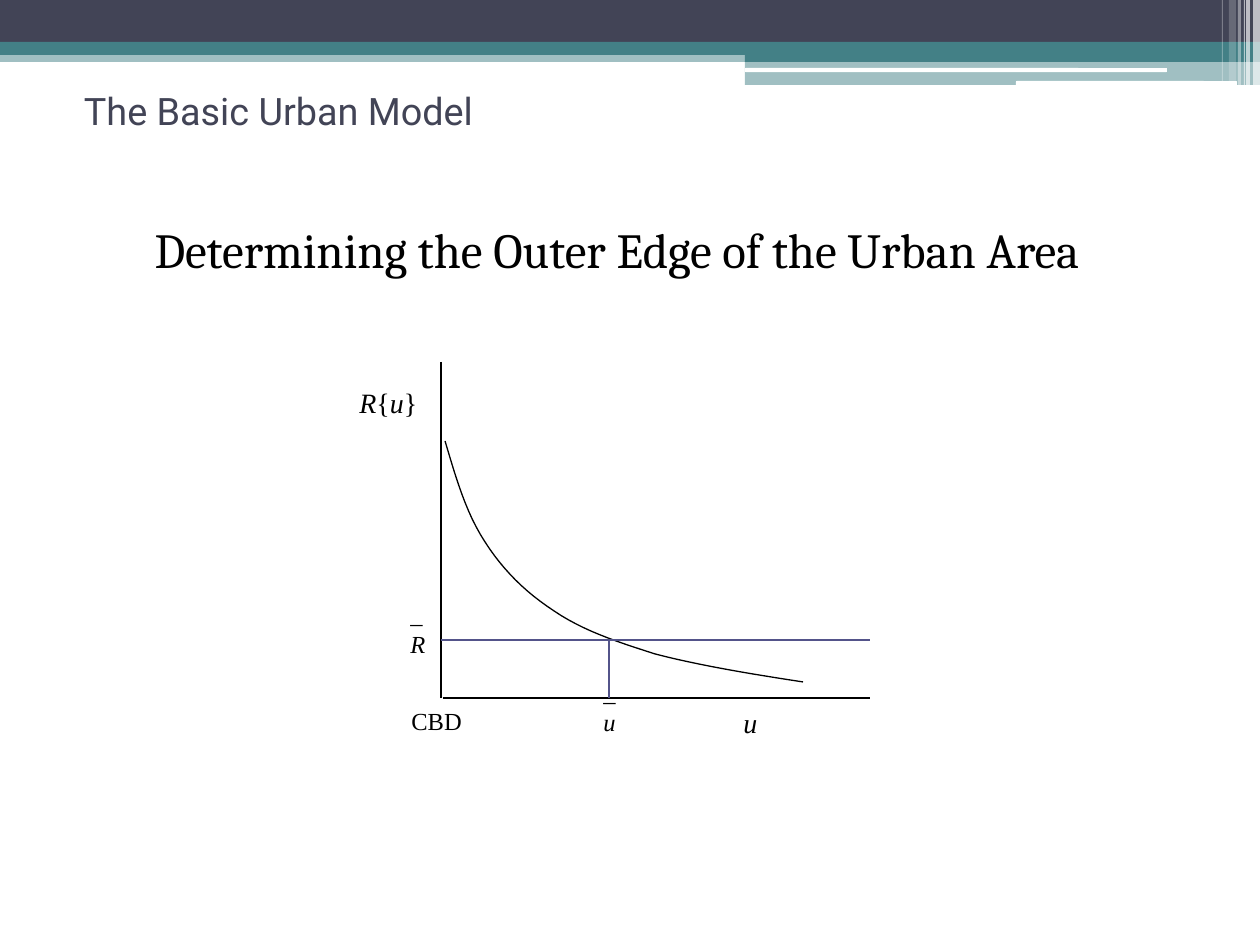
from itertools import pairwise
from lxml.etree import SubElement
from pptx import Presentation
from pptx.dml.color import RGBColor
from pptx.enum.shapes import MSO_CONNECTOR as Line, MSO_SHAPE as Shape
from pptx.enum.text import PP_ALIGN as Align
from pptx.oxml.ns import qn
from pptx.util import Emu, Pt

SLATE, TEAL, WHITE, BLACK, INDIGO = "424456", "438086", "FFFFFF", "000000", "53548A"
SERIF = "Times New Roman"


def px(length):
    return Emu(round(length * 914400 / 126))


def paint(color_format, hex_color, alpha=100):
    color_format.rgb = RGBColor.from_string(hex_color)
    if alpha < 100:
        srgb = color_format._xFill.find(qn("a:srgbClr"))
        SubElement(srgb, qn("a:alpha"), val=str(alpha * 1000))


def add_block(shapes, box, color, alpha=100, kind=Shape.RECTANGLE):
    block = shapes.add_shape(kind, *map(px, box))
    block.shadow.inherit = False
    block.fill.solid()
    paint(block.fill.fore_color, color, alpha)
    block.line.fill.background()


def add_line(shapes, start, end, color):
    line = shapes.add_connector(Line.STRAIGHT, *map(px, start + end))
    line.line.width = Pt(0.75)
    paint(line.line.color, color)
    SubElement(line._element.spPr, qn("a:effectLst"))


def add_frame(shapes, box):
    frame = shapes.add_textbox(*map(px, box)).text_frame
    frame.word_wrap = True
    return frame


def add_run(paragraph, text, size, font, color=BLACK, italic=False):
    run = paragraph.add_run()
    run.text = text
    run.font.size = Pt(size)
    run.font.name = font
    run.font.italic = italic
    paint(run.font.color, color)


def draw_header(shapes, left, top, width):
    tab = 745
    bands = [
        (0, 50, width, 12, TEAL, 50),
        (0, 0, width, 42, SLATE, 100),
        (0, 42, width, 13, TEAL, 100),
        (tab, 49, width - tab, 13, TEAL, 100),
        (tab, 61, width - tab, 24, TEAL, 50),
    ]
    for x, y, w, h, color, alpha in bands:
        add_block(shapes, (left + x, top + y, w, h), color, alpha)
    for x, y, w, h in [(tab, 68, 422, 4), (1016, 81, 221, 5)]:
        add_block(shapes, (left + x, top + y, w, h), WHITE, kind=Shape.ROUNDED_RECTANGLE)
    stripes = [(7, 7, 86, 65), (14, 4, 86, 65), (16, 1, 86, 60),
               (22, 3, 86, 40), (31, 7, 81, 20), (38, 1, 81, 30)]
    for from_right, w, h, alpha in stripes:
        add_block(shapes, (left + width - from_right, top, w, h), WHITE, alpha)


def draw_title(shapes, box):
    frame = add_frame(shapes, box)
    frame.margin_left, frame.margin_top = px(21), 0
    add_run(frame.paragraphs[0], "The Basic Urban Model", 21.6, "Roboto", SLATE)


def draw_heading(shapes, box):
    frame = add_frame(shapes, box)
    frame.margin_left, frame.margin_top = px(28), px(74)
    heading = frame.paragraphs[0]
    heading.alignment = Align.CENTER
    add_run(heading, "Determining the Outer Edge of the Urban Area", 28, "Cambria")


def bezier(points, t):
    while len(points) > 1:
        points = [(x1 + (x2 - x1) * t, y1 + (y2 - y1) * t)
                  for (x1, y1), (x2, y2) in pairwise(points)]
    return points[0]


def draw_rent_curve(shapes, left, top):
    controls = [(4, 79), (15, 116), (25, 151), (44, 180), (62, 208), (84, 230),
                (113, 249), (141, 268), (173, 279), (214, 292), (256, 303),
                (309, 312), (362, 320)]
    steps = 12
    trace = [controls[0]] + [bezier(controls[first:first + 4], step / steps)
                             for first in range(0, len(controls) - 1, 3)
                             for step in range(1, steps + 1)]
    points = [(px(left + x), px(top + y)) for x, y in trace]
    builder = shapes.build_freeform(*points[0])
    builder.add_line_segments(points[1:], close=False)
    curve = builder.convert_to_shape()
    curve.shadow.inherit = False
    curve.fill.background()
    curve.line.width = Pt(0.75)
    paint(curve.line.color, BLACK)


def draw_label(shapes, box, size, parts, barred=False):
    frame = add_frame(shapes, box)
    symbol = frame.paragraphs[0]
    if barred:
        symbol.line_spacing = 0.5
        add_run(symbol, "_", size, SERIF, italic=True)
        symbol = frame.add_paragraph()
    symbol.line_spacing = 1.07
    symbol.space_after = Pt(8)
    for text, italic in parts:
        add_run(symbol, text, size, SERIF, italic=italic)


def draw_rent_graph(slide, left, top, width, height):
    shapes = slide.shapes.add_group_shape().shapes
    right, bottom = left + width, top + height
    rent_y, edge_x = top + 278, left + 168
    add_line(shapes, (left, top), (left, bottom), BLACK)
    add_line(shapes, (left + 2, bottom), (right, bottom), BLACK)
    draw_rent_curve(shapes, left, top)
    labels = [
        ((-94, 15, 102, 71), 16, [("R", True), ("{", False), ("u", True), ("}", False)], False),
        ((290, 335, 69, 58), 16, [("u", True)], False),
        ((-42, 336, 103, 58), 14, [("CBD", False)], False),
        ((-43, 244, 74, 52), 14, [("R", True)], True),
        ((150, 322, 50, 62), 14, [("u", True)], True),
    ]
    for (x, y, w, h), size, parts, barred in labels:
        draw_label(shapes, (left + x, top + y, w, h), size, parts, barred)
    add_line(shapes, (left, rent_y), (right, rent_y), INDIGO)
    add_line(shapes, (edge_x, rent_y), (edge_x, bottom), INDIGO)


def main():
    deck = Presentation()
    deck.slide_width, deck.slide_height = px(1260), px(945)
    slide = deck.slides.add_slide(deck.slide_layouts[6])
    draw_header(slide.shapes, 0, 0, 1260)
    draw_title(slide.shapes, (63, 88, 1134, 73))
    draw_heading(slide.shapes, (42, 145, 1134, 738))
    draw_rent_graph(slide, 441, 362, 429, 336)
    deck.save("out.pptx")


if __name__ == "__main__":
    main()
